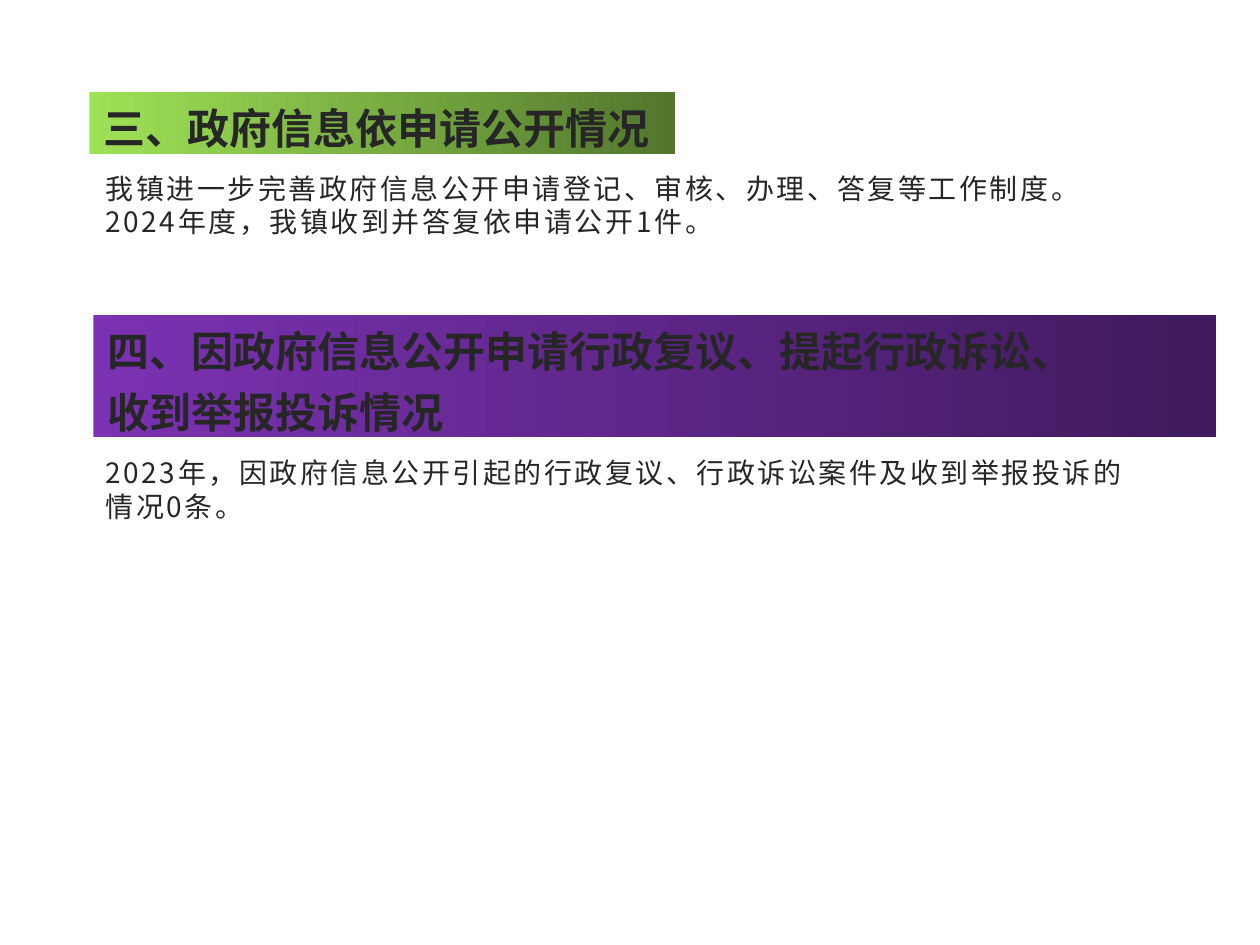
import pptx
import pptx.util
import pptx.dml.color
import pptx.enum.shapes
import pptx.enum.text
import lxml.etree

Inches = pptx.util.Inches
Pt = pptx.util.Pt
RGBColor = pptx.dml.color.RGBColor

theme = {
    "font": "Noto Sans CJK SC",
    "ink": RGBColor.from_string("262626"),
    "heading_size": Pt(24),
    "detail_size": Pt(16),
    "detail_tracking": 150,
    "request_band": ("9EE256", "52762D"),
    "dispute_band": ("7B32B2", "401A5D"),
}
heading_format = {"size": theme["heading_size"], "bold": True}
detail_format = {"size": theme["detail_size"], "bold": False}
heading_frame = {
    "margin_left": Inches(0.11),
    "margin_top": Inches(0.04),
    "margin_right": Inches(0.08),
    "margin_bottom": Inches(0.04),
    "word_wrap": True,
    "auto_size": pptx.enum.text.MSO_AUTO_SIZE.NONE,
    "vertical_anchor": pptx.enum.text.MSO_ANCHOR.MIDDLE,
}
detail_frame = {
    "word_wrap": True,
    "auto_size": pptx.enum.text.MSO_AUTO_SIZE.SHAPE_TO_FIT_TEXT,
}


def write_lines(frame, lines, frame_format, font_format, line_spacing, tracking=None):
    for name, value in frame_format.items():
        setattr(frame, name, value)
    for index, line in enumerate(lines):
        paragraph = frame.paragraphs[0] if index == 0 else frame.add_paragraph()
        paragraph.alignment = pptx.enum.text.PP_ALIGN.LEFT
        paragraph.line_spacing = line_spacing
        run = paragraph.add_run()
        run.text = line
        for name, value in {"name": theme["font"], **font_format}.items():
            setattr(run.font, name, value)
        run.font.color.rgb = theme["ink"]
        properties = run.font._element
        east_asian = lxml.etree.SubElement(properties, pptx.oxml.ns.qn("a:ea"))
        east_asian.set("typeface", theme["font"])
        if tracking:
            properties.set("spc", str(tracking))


presentation = pptx.Presentation()
presentation.slide_width = Inches(10)
presentation.slide_height = Inches(7.5)
slide = presentation.slides.add_slide(presentation.slide_layouts.get_by_name("Title Only"))

request_heading = slide.shapes.title
dispute_heading = slide.shapes.add_shape(
    pptx.enum.shapes.MSO_SHAPE.RECTANGLE, 0, 0, Inches(1), Inches(1)
)
dispute_heading.shadow.inherit = False

sections = [
    (
        request_heading, (0.71, 0.73, 4.65, 0.49), theme["request_band"],
        ["三、政府信息依申请公开情况"], 1.31,
        "我镇进一步完善政府信息公开申请登记、审核、办理、答复等工作制度。2024年度，我镇收到并答复依申请公开1件。",
    ),
    (
        dispute_heading, (0.74, 2.5, 8.91, 0.97), theme["dispute_band"],
        ["四、因政府信息公开申请行政复议、提起行政诉讼、", "收到举报投诉情况"], 3.57,
        "2023年，因政府信息公开引起的行政复议、行政诉讼案件及收到举报投诉的情况0条。",
    ),
]

for heading, bounds, band, heading_lines, detail_top, detail_text in sections:
    for name, value in zip(("left", "top", "width", "height"), bounds):
        setattr(heading, name, Inches(value))
    heading.fill.gradient()
    heading.fill.gradient_angle = 0
    for stop, color in zip(heading.fill.gradient_stops, band):
        stop.color.rgb = RGBColor.from_string(color)
    heading.line.fill.background()
    write_lines(heading.text_frame, heading_lines, heading_frame, heading_format, 1.2)

    detail = slide.shapes.add_textbox(
        Inches(0.74), Inches(detail_top), Inches(8.47), Inches(0.64)
    )
    write_lines(
        detail.text_frame, [detail_text], detail_frame, detail_format, 1.0,
        theme["detail_tracking"],
    )

presentation.save("out.pptx")
